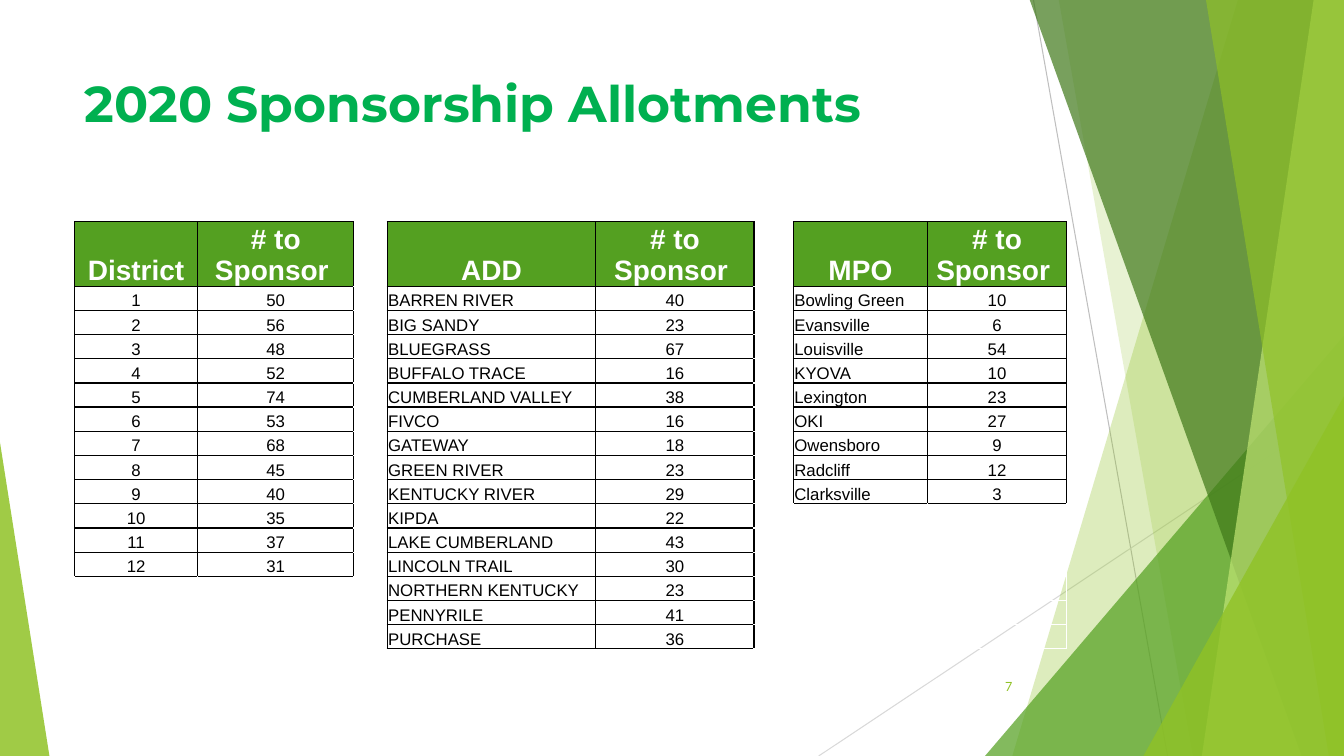
from lxml.etree import SubElement
from pptx import Presentation
from pptx.dml.color import RGBColor
from pptx.enum.shapes import MSO_CONNECTOR, MSO_SHAPE
from pptx.enum.text import MSO_ANCHOR, PP_ALIGN
from pptx.oxml.ns import qn
from pptx.util import Inches, Pt

COLORS = {
    "lime": "90C226", "green": "54A021", "forest": "3F7819", "pale": "C0E474",
    "title": "00B050", "black": "000000", "white": "FFFFFF",
    "gray": "BFBFBF", "silver": "D9D9D9",
}
FORMATS = {
    "title": {"name": "Montserrat", "size": Pt(36), "bold": True},
    "header": {"name": "Arial", "size": Pt(20), "bold": True},
    "entry": {"name": "Arial", "size": Pt(12), "bold": False},
    "number": {"name": "Lato", "size": Pt(9), "bold": False},
}
CELL_FORMAT = {
    "margin_left": Inches(0.01), "margin_right": Inches(0.01),
    "margin_top": Inches(0.01), "margin_bottom": 0,
    "vertical_anchor": MSO_ANCHOR.BOTTOM,
}
WIDTH, HEIGHT = 13.33, 7.5
COLUMN_WIDTHS = [1.22, 1.55, 0.33, 2.07, 1.57, 0.39, 1.33, 1.38]
HEADER_HEIGHT, ROW_HEIGHT, ROW_COUNT = 0.64, 0.24, 16
NAME_COLUMNS = (3, 6)
EDGES = {"a:lnL": (0, -1), "a:lnR": (0, 1), "a:lnT": (-1, 0), "a:lnB": (1, 0)}

DISTRICTS = list(enumerate([50, 56, 48, 52, 74, 53, 68, 45, 40, 35, 37, 31], 1))
ADDS = [
    ("BARREN RIVER", 40), ("BIG SANDY", 23), ("BLUEGRASS", 67),
    ("BUFFALO TRACE", 16), ("CUMBERLAND VALLEY", 38), ("FIVCO", 16),
    ("GATEWAY", 18), ("GREEN RIVER", 23), ("KENTUCKY RIVER", 29),
    ("KIPDA", 22), ("LAKE CUMBERLAND", 43), ("LINCOLN TRAIL", 30),
    ("NORTHERN KENTUCKY", 23), ("PENNYRILE", 41), ("PURCHASE", 36),
]
MPOS = [
    ("Bowling Green", 10), ("Evansville", 6), ("Louisville", 54),
    ("KYOVA", 10), ("Lexington", 23), ("OKI", 27), ("Owensboro", 9),
    ("Radcliff", 12), ("Clarksville", 3),
]
ALLOTMENTS = {0: ("District", DISTRICTS), 3: ("ADD", ADDS), 6: ("MPO", MPOS)}


class SlideBuilder:
    """Draws the elements of one slide in a shared style."""

    def __init__(self, deck):
        self.slide = deck.slides.add_slide(deck.slide_layouts[5])
        self.shapes = self.slide.shapes

    def color(self, name):
        return RGBColor.from_string(COLORS[name])

    def add_text(self, paragraph, text, style, color, align):
        paragraph.alignment = align
        run = paragraph.add_run()
        run.text = text
        for key, value in FORMATS[style].items():
            setattr(run.font, key, value)
        run.font.color.rgb = self.color(color)

    def line(self, start, end, color):
        ray = self.shapes.add_connector(
            MSO_CONNECTOR.STRAIGHT, *map(Inches, start + end))
        ray.line.color.rgb = self.color(color)
        ray.line.width = Pt(0.75)
        SubElement(ray._element.spPr, qn("a:effectLst"))

    def tint(self, facet, color, opacity):
        facet.shadow.inherit = False
        facet.line.fill.background()
        facet.fill.solid()
        facet.fill.fore_color.rgb = self.color(color)
        shade = facet._element.spPr.find(qn("a:solidFill"))[0]
        SubElement(shade, qn("a:alpha"), val=str(opacity * 1000))

    def wedge(self, top_left, bottom_left, color, opacity):
        corners = [(WIDTH, -0.01), (WIDTH, HEIGHT), (bottom_left, HEIGHT)]
        outline = self.shapes.build_freeform(Inches(top_left), Inches(-0.01))
        outline.add_line_segments(
            [(Inches(x), Inches(y)) for x, y in corners], close=True)
        self.tint(outline.convert_to_shape(), color, opacity)

    def triangle(self, left, width, height, apex, color, opacity):
        box = (left, HEIGHT - height, width, height)
        facet = self.shapes.add_shape(
            MSO_SHAPE.ISOSCELES_TRIANGLE, *map(Inches, box))
        facet.adjustments[0] = apex
        self.tint(facet, color, opacity)

    def title(self, text, box):
        heading = self.shapes.title
        heading.left, heading.top, heading.width, heading.height = map(Inches, box)
        heading.text_frame.vertical_anchor = MSO_ANCHOR.TOP
        heading.text_frame.word_wrap = True
        self.add_text(heading.text_frame.paragraphs[0], text, "title", "title",
                      PP_ALIGN.LEFT)
        self.shapes._spTree.append(heading._element)

    def page_number(self, text, box):
        frame = self.shapes.add_textbox(*map(Inches, box)).text_frame
        frame.word_wrap = True
        frame.vertical_anchor = MSO_ANCHOR.MIDDLE
        self.add_text(frame.paragraphs[0], text, "number", "lime", PP_ALIGN.RIGHT)

    def borders(self, cell, row, column, entries):
        properties = cell._tc.get_or_add_tcPr()
        for index, (tag, (down, across)) in enumerate(EDGES.items()):
            inked = {(row, column), (row + down, column + across)} & entries.keys()
            edge = properties.makeelement(qn(tag), {"w": str(Pt(1))})
            paint = SubElement(edge, qn("a:solidFill"))
            SubElement(paint, qn("a:srgbClr"),
                       val=COLORS["black" if inked else "white"])
            properties.insert(index, edge)

    def fill_cell(self, cell, row, column, entries):
        for key, value in CELL_FORMAT.items():
            setattr(cell, key, value)
        cell.fill.background()
        paragraph = cell.text_frame.paragraphs[0]
        if (row, column) not in entries:
            SubElement(paragraph._p, qn("a:endParaRPr"), sz="1200")
        elif row == 0:
            cell.fill.solid()
            cell.fill.fore_color.rgb = self.color("green")
            self.add_text(paragraph, entries[row, column], "header", "white",
                          PP_ALIGN.CENTER)
        else:
            align = PP_ALIGN.LEFT if column in NAME_COLUMNS else PP_ALIGN.CENTER
            self.add_text(paragraph, entries[row, column], "entry", "black", align)
        self.borders(cell, row, column, entries)

    def table(self, left, top, entries):
        height = HEADER_HEIGHT + ROW_HEIGHT * (ROW_COUNT - 1)
        box = map(Inches, (left, top, sum(COLUMN_WIDTHS), height))
        grid = self.shapes.add_table(ROW_COUNT, len(COLUMN_WIDTHS), *box).table
        grid.first_row = grid.horz_banding = False
        for column, width in zip(grid.columns, COLUMN_WIDTHS):
            column.width = Inches(width)
        for row, line in enumerate(grid.rows):
            line.height = Inches(ROW_HEIGHT if row else HEADER_HEIGHT)
            for column, cell in enumerate(line.cells):
                self.fill_cell(cell, row, column, entries)


def allotment_entries():
    """Map each (row, column) position to its text."""
    entries = {}
    for column, (group, sponsors) in ALLOTMENTS.items():
        for row, pair in enumerate([(group, "# to Sponsor "), *sponsors]):
            for offset, value in enumerate(pair):
                entries[row, column + offset] = str(value)
    return entries


def main():
    """Build the sponsorship slide."""
    deck = Presentation()
    deck.slide_width, deck.slide_height = Inches(WIDTH), Inches(HEIGHT)
    page = SlideBuilder(deck)
    page.line((10.25, 0), (11.58, HEIGHT), "gray")
    page.line((WIDTH, 4.03), (8.12, HEIGHT), "silver")
    page.wedge(12.28, 10.04, "lime", 30)
    page.wedge(10.5, 11.83, "lime", 20)
    page.triangle(9.77, 3.56, 4.17, 1, "green", 72)
    page.wedge(10.21, 12.91, "forest", 70)
    page.wedge(13.03, 11.92, "pale", 70)
    page.wedge(11.96, 13.18, "lime", 65)
    page.triangle(11.34, 1.99, 3.57, 1, "lime", 80)
    page.triangle(0, 0.49, 3.11, 0, "lime", 85)
    page.title("2020 Sponsorship Allotments", (0.74, 0.67, 9.4, 1.44))
    page.table(0.74, 2.2, allotment_entries())
    page.page_number("7", (9.39, 6.61, 0.75, 0.4))
    deck.save("out.pptx")


if __name__ == "__main__":
    main()
